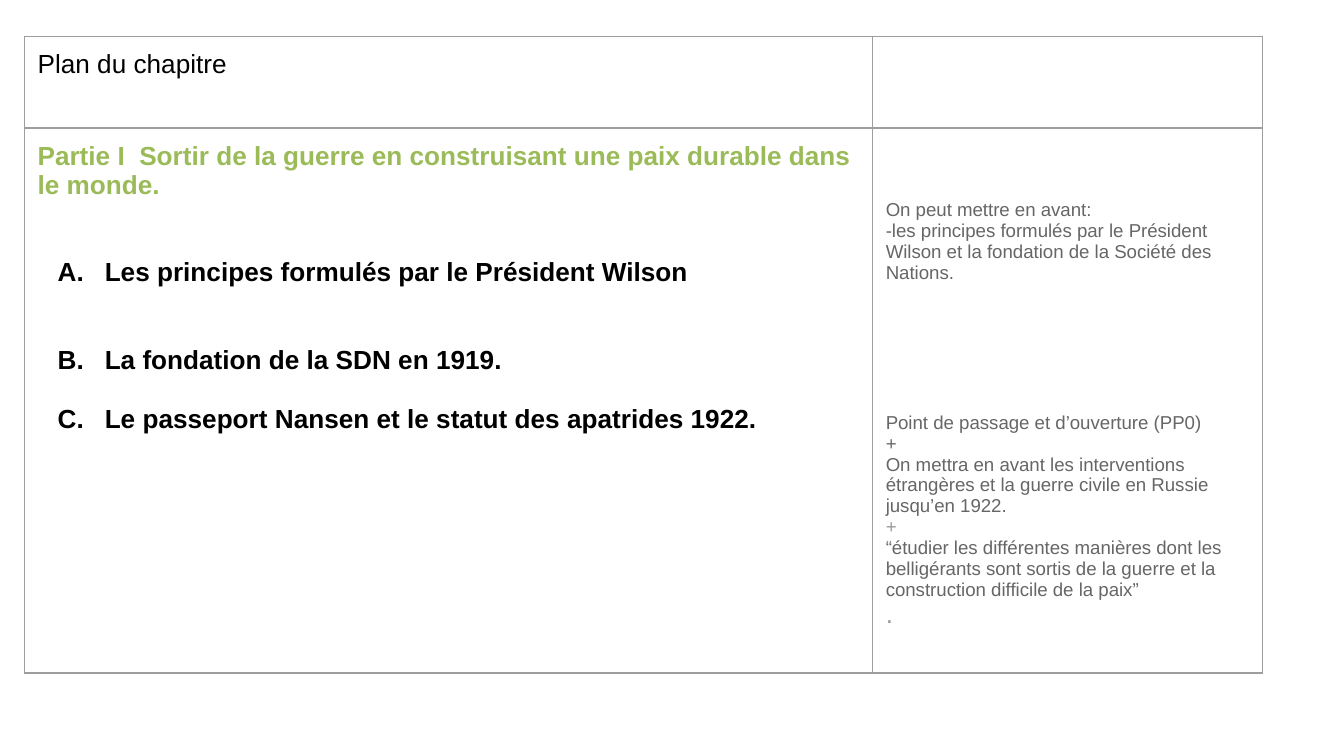
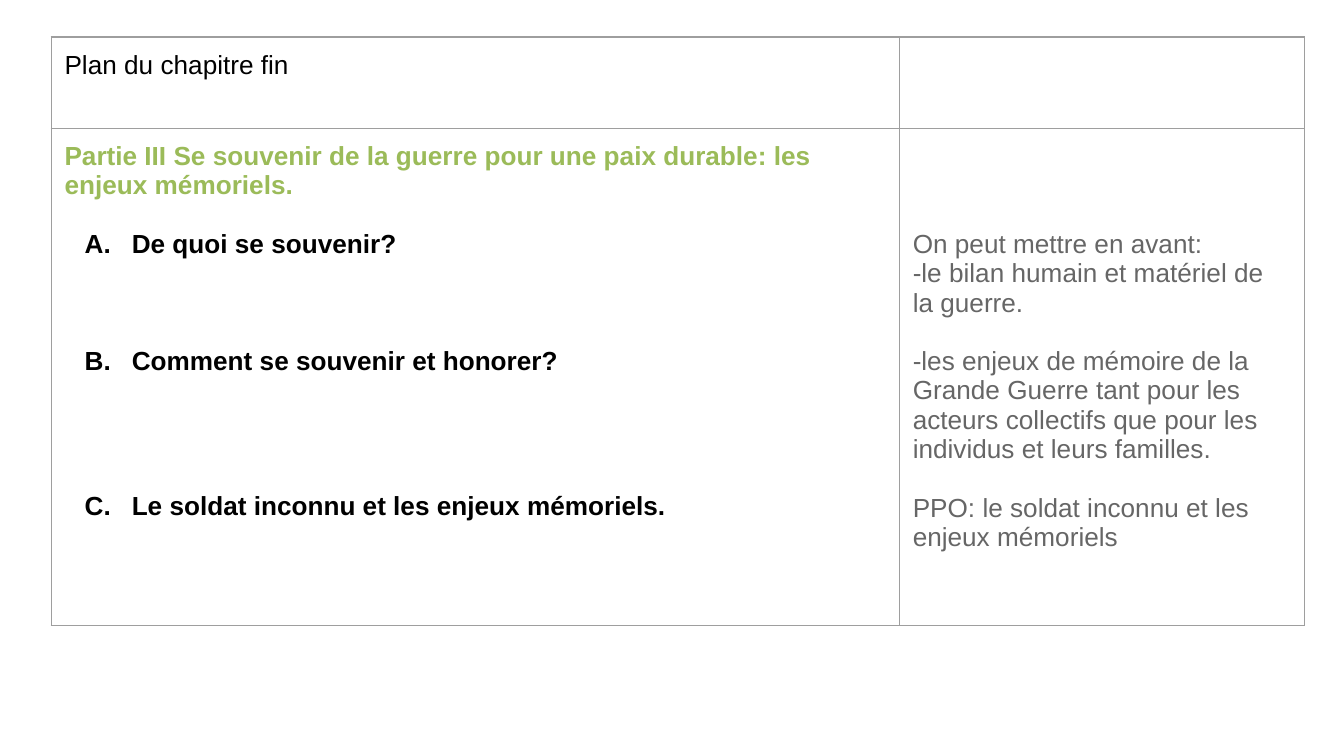
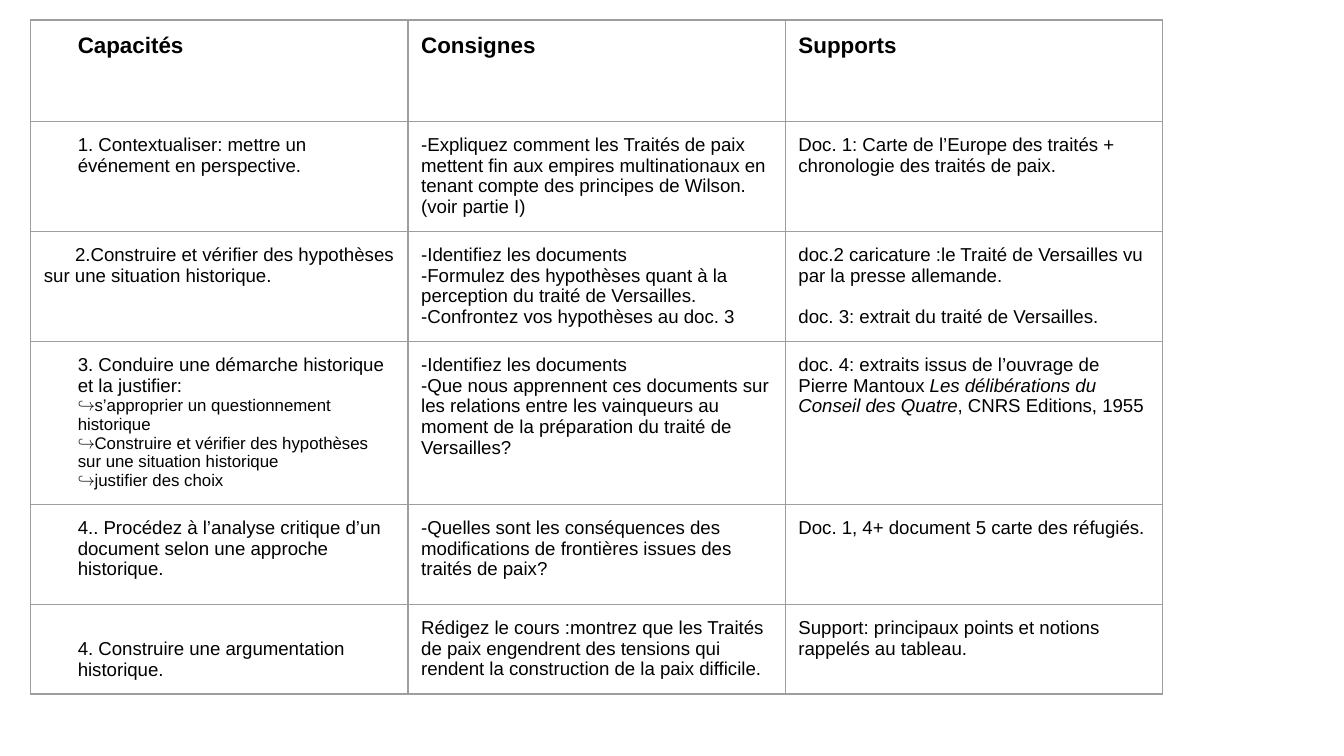
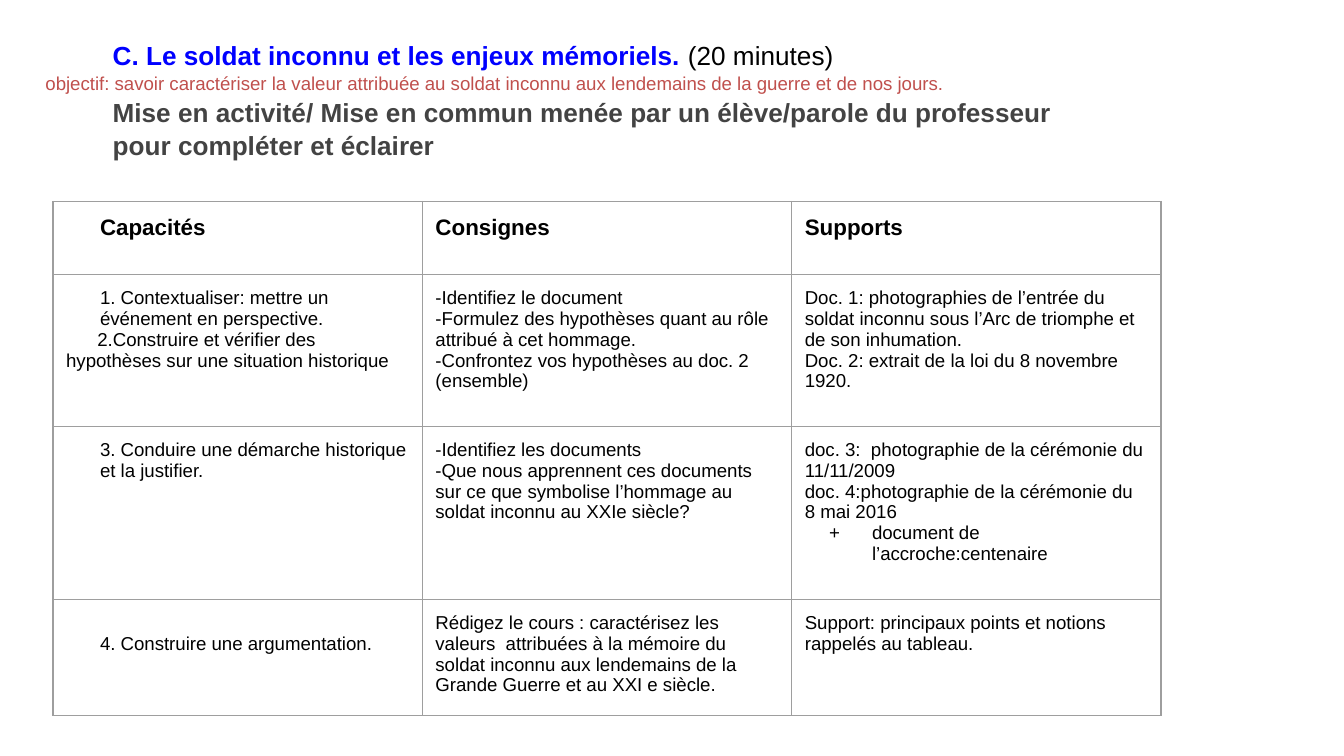
from lxml.etree import SubElement
from pptx import Presentation
from pptx.dml.color import RGBColor
from pptx.enum.text import MSO_ANCHOR as Anchor
from pptx.oxml.ns import qn
from pptx.util import Cm, Pt

COLORS = {
    "text": "000000",
    "part": "9BBB59",
    "note": "666666",
    "faint": "999999",
    "border": "9E9E9E",
    "heading": "0000FF",
    "goal": "C0504D",
    "method": "434343",
}
FONT = "Arial"
MARGIN = 0.25
LINE_14 = 15.6  # height in points of a line of 14 pt text
LINE_10 = 11.2

# Paragraph formats
PLAN = dict(size=14)
PART = dict(size=14, bold=True, color="part")
POINT = dict(size=14, bold=True, left=1.27, indent=-0.89, number="alphaUcPeriod")
NOTE = dict(size=10, color="note")
BIG_NOTE = dict(size=14, color="note")
HEAD = dict(size=12, bold=True)
BODY = dict(size=10)
SKILL = dict(size=10, left=0.64)
SUBSKILL = dict(size=9, left=0.64)
HYPOTHESIS = dict(size=10, indent=0.59)
EXTRA = dict(size=10, left=1.27, indent=-0.81, bullet="+")


def write(frame, text, size=10, color="text", bold=False, italic=False, left=0,
          indent=0, before=0, spacing=None, number=None, bullet=None, join=False):
    """Add a paragraph to the frame, or a run to its last paragraph when joining."""
    paragraph = frame.paragraphs[-1]
    if not join:
        if paragraph.runs:
            paragraph = frame.add_paragraph()
        properties = paragraph._p.get_or_add_pPr()
        properties.set("marL", str(Cm(left)))
        properties.set("indent", str(Cm(indent)))
        if number or bullet:
            tint = SubElement(properties, qn("a:buClr"))
            SubElement(tint, qn("a:srgbClr"), val=COLORS["text"])
            SubElement(properties, qn("a:buFont"), typeface=FONT)
        if number:
            SubElement(properties, qn("a:buAutoNum"), type=number)
        elif bullet:
            SubElement(properties, qn("a:buChar"), char=bullet)
        else:
            SubElement(properties, qn("a:buNone"))
        if before:
            paragraph.space_before = Pt(before)
        if spacing:
            paragraph.line_spacing = spacing
    run = paragraph.add_run()
    run.text = text
    run.font.name = FONT
    run.font.size = Pt(size)
    run.font.bold = bold
    run.font.italic = italic
    run.font.color.rgb = RGBColor.from_string(COLORS[color])


def draw_borders(cell):
    properties = cell._tc.get_or_add_tcPr()
    for side in ("a:lnL", "a:lnR", "a:lnT", "a:lnB"):
        line = SubElement(properties, qn(side), w=str(Pt(0.75)))
        fill = SubElement(line, qn("a:solidFill"))
        SubElement(fill, qn("a:srgbClr"), val=COLORS["border"])


# Each cell is a list of (text, format, changes to the format)
column_heads = [
    [("Capacités", HEAD, dict(left=0.64))],
    [("Consignes", HEAD, {})],
    [("Supports", HEAD, {})],
]
board_support = [("Support: principaux points et notions rappelés au tableau.", BODY, {})]
context_skill = ("1. Contextualiser: mettre un événement en perspective.", SKILL, {})
identify = ("-Identifiez les documents", BODY, {})

plan_start = [
    [[("Plan du chapitre", PLAN, {})], []],
    [
        [
            ("Partie I  Sortir de la guerre en construisant une paix durable dans le monde.",
             PART, {}),
            ("Les principes formulés par le Président Wilson", POINT, dict(before=2 * LINE_14)),
            ("La fondation de la SDN en 1919.", POINT, dict(before=2 * LINE_14)),
            ("Le passeport Nansen et le statut des apatrides 1922.", POINT,
             dict(before=LINE_14)),
        ],
        [
            ("On peut mettre en avant:", NOTE, {}),
            ("-les principes formulés par le Président Wilson et la fondation de la "
             "Société des Nations.", NOTE, {}),
            ("Point de passage et d’ouverture (PP0)", NOTE,
             dict(before=3 * LINE_14 + 2 * LINE_10)),
            ("+", NOTE, {}),
            ("On mettra en avant les interventions étrangères et la guerre civile en "
             "Russie jusqu’en 1922.", NOTE, {}),
            ("+", NOTE, dict(color="faint")),
            ("“étudier les différentes manières dont les belligérants sont sortis de la "
             "guerre et la construction difficile de la paix”", NOTE, {}),
            (".", NOTE, dict(size=14, color="faint")),
        ],
    ],
]

plan_end = [
    [[("Plan du chapitre fin", PLAN, {})], []],
    [
        [
            ("Partie III Se souvenir de la guerre pour une paix durable: les enjeux "
             "mémoriels.", PART, {}),
            ("De quoi se souvenir?", POINT, dict(before=LINE_14)),
            ("Comment se souvenir et honorer?", POINT, dict(before=3 * LINE_14)),
            ("Le soldat inconnu et les enjeux mémoriels.", POINT, dict(before=4 * LINE_14)),
        ],
        [
            ("On peut mettre en avant:", BIG_NOTE, {}),
            ("-le bilan humain et matériel de la guerre.", BIG_NOTE, {}),
            ("-les enjeux de mémoire de la Grande Guerre tant pour les acteurs collectifs "
             "que pour les individus et leurs familles.", BIG_NOTE, dict(before=LINE_14)),
            ("PPO: le soldat inconnu et les enjeux mémoriels", BIG_NOTE,
             dict(before=LINE_14)),
        ],
    ],
]

treaty_activity = [
    column_heads,
    [
        [context_skill],
        [("-Expliquez comment les Traités de paix mettent fin aux empires multinationaux "
          "en tenant compte des principes de Wilson. (voir partie I)", BODY, {})],
        [("Doc. 1: Carte de l’Europe des traités + chronologie des traités de paix.",
          BODY, {})],
    ],
    [
        [("2.Construire et vérifier des hypothèses sur une situation historique.",
          HYPOTHESIS, {})],
        [
            identify,
            ("-Formulez des hypothèses quant à la perception du traité de Versailles.",
             BODY, {}),
            ("-Confrontez vos hypothèses au doc. 3", BODY, {}),
        ],
        [
            ("doc.2 caricature :le Traité de Versailles vu par la presse allemande.",
             BODY, {}),
            ("doc. 3: extrait du traité de Versailles.", BODY, dict(before=LINE_10)),
        ],
    ],
    [
        [
            ("3. Conduire une démarche historique et la justifier:", SKILL, {}),
            ("↪s’approprier un questionnement historique", SUBSKILL, {}),
            ("↪Construire et vérifier des hypothèses sur une situation historique",
             SUBSKILL, {}),
            ("↪justifier des choix", SUBSKILL, {}),
        ],
        [
            identify,
            ("-Que nous apprennent ces documents sur les relations entre les vainqueurs "
             "au moment de la préparation du traité de Versailles?", BODY, {}),
        ],
        [
            ("doc. 4: extraits issus de l’ouvrage de Pierre Mantoux ", BODY, {}),
            ("Les délibérations du Conseil des Quatre", BODY, dict(italic=True, join=True)),
            (", CNRS Editions, 1955", BODY, dict(join=True)),
        ],
    ],
    [
        [("4.. Procédez à l’analyse critique d’un document selon une approche historique.",
          SKILL, {})],
        [("-Quelles sont les conséquences des modifications de frontières issues des "
          "traités de paix?", BODY, {})],
        [("Doc. 1, 4+ document 5 carte des réfugiés.", BODY, {})],
    ],
    [
        [("4. Construire une argumentation historique.", SKILL, {})],
        [("Rédigez le cours :montrez que les Traités de paix engendrent des tensions qui "
          "rendent la construction de la paix difficile.", BODY, {})],
        board_support,
    ],
]

soldier_activity = [
    column_heads,
    [
        [
            context_skill,
            ("2.Construire et vérifier des hypothèses sur une situation historique",
             HYPOTHESIS, {}),
        ],
        [
            ("-Identifiez le document", BODY, {}),
            ("-Formulez des hypothèses quant au rôle attribué à cet hommage.", BODY, {}),
            ("-Confrontez vos hypothèses au doc. 2 (ensemble)", BODY, {}),
        ],
        [
            ("Doc. 1: photographies de l’entrée du soldat inconnu sous l’Arc de triomphe "
             "et de son inhumation.", BODY, {}),
            ("Doc. 2: extrait de la loi du 8 novembre 1920.", BODY, {}),
        ],
    ],
    [
        [("3. Conduire une démarche historique et la justifier.", SKILL, {})],
        [
            identify,
            ("-Que nous apprennent ces documents sur ce que symbolise l’hommage au soldat "
             "inconnu au XXIe siècle?", BODY, {}),
        ],
        [
            ("doc. 3:  photographie de la cérémonie du 11/11/2009", BODY, {}),
            ("doc. 4:photographie de la cérémonie du 8 mai 2016", BODY, {}),
            ("document de l’accroche:centenaire", EXTRA, {}),
        ],
    ],
    [
        [("4. Construire une argumentation.", SKILL, {})],
        [("Rédigez le cours : caractérisez les valeurs  attribuées à la mémoire du soldat "
          "inconnu aux lendemains de la Grande Guerre et au XXI e siècle.", BODY, {})],
        board_support,
    ],
]

# Content, left, top, column widths, row heights, and top margins of lowered cells
grids = [
    (plan_start, 0.46, 0.69, [16.03, 7.37], [1.73, 10.3], {(1, 1): 1.36}),
    (plan_end, 0.97, 0.7, [16.03, 7.65], [1.73, 9.4], {(1, 1): 1.91}),
    (treaty_activity, 0.58, 0.38, [7.13] * 3, [1.91, 2.08, 2.08, 3.08, 1.89, 1.7],
     {(5, 0): 0.65}),
    (soldier_activity, 1, 3.81, [6.98] * 3, [1.38, 2.87, 3.27, 2.08], {(3, 0): 0.65}),
]

deck = Presentation()
deck.slide_width, deck.slide_height = Cm(25.4), Cm(14.29)
slides = [deck.slides.add_slide(deck.slide_layouts[6]) for _ in grids]

# Heading of the last slide
heading = slides[-1].shapes.add_textbox(Cm(0.86), Cm(1.65), Cm(19.99), Cm(1.02)).text_frame
heading.word_wrap = True
heading.vertical_anchor = Anchor.MIDDLE
heading.margin_left = heading.margin_right = heading.margin_top = 0
heading.margin_bottom = Cm(0.58)
write(heading, "C. Le soldat inconnu et les enjeux mémoriels. ", size=14, color="heading",
      bold=True, left=1.27, spacing=1.06)
write(heading, "(20 minutes)", size=14, join=True)
write(heading, "objectif: savoir caractériser la valeur attribuée au soldat inconnu aux "
      "lendemains de la guerre et de nos jours.", color="goal", spacing=1.06)
write(heading, "Mise en activité/ Mise en commun menée par un élève/parole du professeur "
      "pour compléter et éclairer", size=14, color="method", bold=True, left=1.27,
      spacing=1.06)

for slide, (rows, left, top, widths, heights, lowered) in zip(slides, grids):
    grid = slide.shapes.add_table(len(heights), len(widths), Cm(left), Cm(top),
                                  Cm(sum(widths)), Cm(sum(heights))).table
    grid.first_row = grid.horz_banding = False
    for column, width in zip(grid.columns, widths):
        column.width = Cm(width)
    for row, height in zip(grid.rows, heights):
        row.height = Cm(height)
    for r, row_content in enumerate(rows):
        for c, entries in enumerate(row_content):
            cell = grid.cell(r, c)
            cell.margin_left = cell.margin_right = cell.margin_bottom = Cm(MARGIN)
            cell.margin_top = Cm(lowered.get((r, c), MARGIN))
            draw_borders(cell)
            cell.fill.background()
            for text, style, changes in entries:
                write(cell.text_frame, text, **{**style, **changes})

deck.save("out.pptx")
